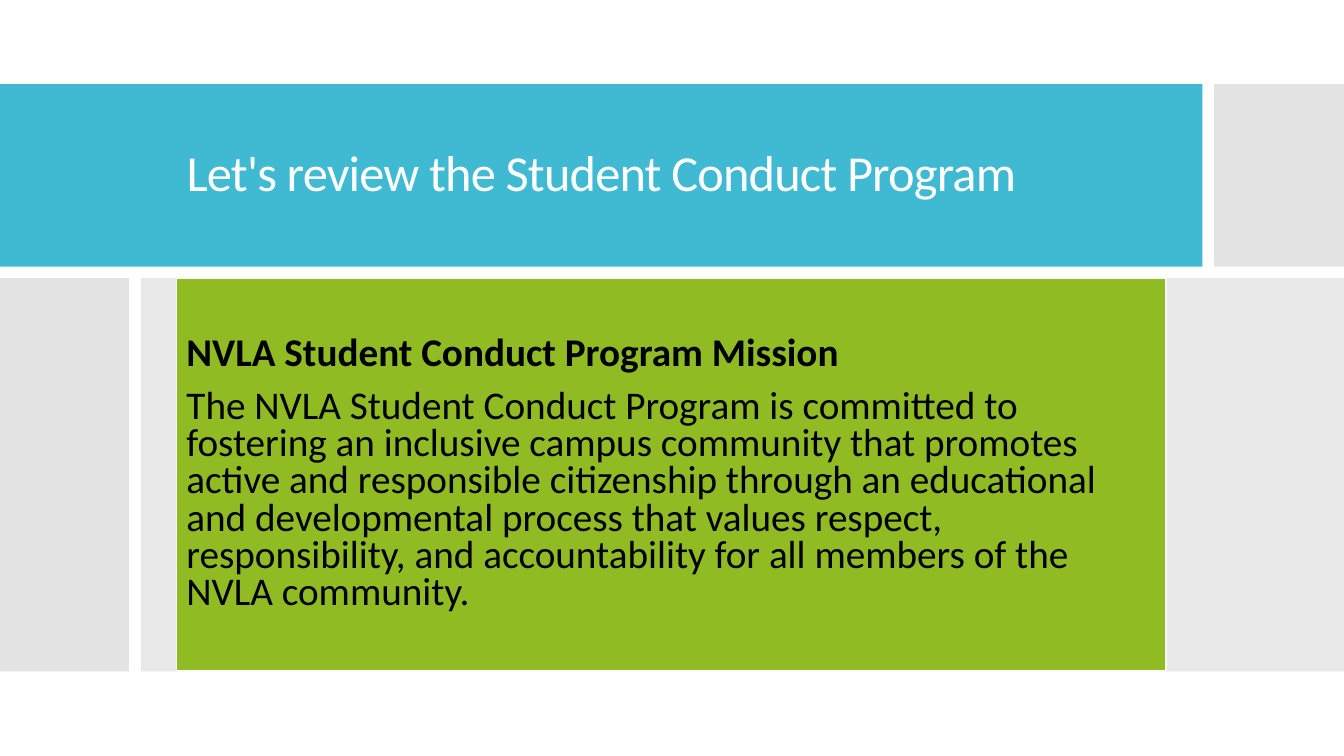
"""Build the slide that presents the mission of the Student Conduct Program."""
from dataclasses import dataclass

import pptx
import pptx.dml.color
import pptx.enum.shapes
import pptx.enum.text
import pptx.oxml.ns
import pptx.util
from lxml import etree
from pptx.util import Cm


@dataclass(frozen=True)
class Theme:
    font: str = "Calibri"
    teal: str = "40BAD2"
    green: str = "90BB23"
    grey: str = "C8C8C8"
    pale_grey: str = "D9D9D9"
    outline: str = "F9F9F9"
    white: str = "FFFFFF"
    black: str = "000000"
    title_size: float = 36
    mission_size: float = 28


THEME = Theme()
SLIDE_WIDTH, SLIDE_HEIGHT = Cm(33.87), Cm(19.05)
BAND_TOP, BAND_HEIGHT = Cm(2.12), Cm(4.6)
PANEL_TOP, PANEL_HEIGHT = Cm(7.01), Cm(9.91)
TEXT_LEFT, TEXT_WIDTH = Cm(4.45), Cm(24.94)


def paint(fill, color, opacity=100):
    fill.solid()
    fill.fore_color.rgb = pptx.dml.color.RGBColor.from_string(color)
    return opacity


def set_opacity(block, percent):
    for color in block.element.iter(pptx.oxml.ns.qn("a:srgbClr")):
        alpha = etree.SubElement(color, pptx.oxml.ns.qn("a:alpha"))
        alpha.set("val", str(percent * 1000))


def add_block(slide, left, top, width, height, color):
    block = slide.shapes.add_shape(
        pptx.enum.shapes.MSO_SHAPE.RECTANGLE, left, top, width, height)
    block.shadow.inherit = False
    paint(block.fill, color)
    block.line.fill.background()
    return block


def prepare_frame(frame):
    frame.word_wrap = True
    frame.auto_size = pptx.enum.text.MSO_AUTO_SIZE.NONE
    frame.vertical_anchor = pptx.enum.text.MSO_ANCHOR.MIDDLE


def style_paragraph(paragraph, size, color, spacing, bold=False):
    paragraph.alignment = pptx.enum.text.PP_ALIGN.LEFT
    paragraph.line_spacing = spacing
    paragraph.font.name = THEME.font
    paragraph.font.size = pptx.util.Pt(size)
    paragraph.font.bold = bold
    paragraph.font.color.rgb = pptx.dml.color.RGBColor.from_string(color)


def place_title(slide, text):
    title = slide.shapes.title
    title.left, title.top = TEXT_LEFT, Cm(3.02)
    title.width, title.height = TEXT_WIDTH, Cm(2.77)
    title.text_frame.text = text
    prepare_frame(title.text_frame)
    style_paragraph(title.text_frame.paragraphs[0], THEME.title_size, THEME.white, 0.9)
    for properties in title.element.iter(pptx.oxml.ns.qn("a:defRPr")):
        properties.set("spc", "-60")
    title.element.getparent().append(title.element)


def add_mission(slide, heading, statement):
    panel = add_block(slide, TEXT_LEFT, PANEL_TOP, TEXT_WIDTH, PANEL_HEIGHT, THEME.green)
    paint(panel.line.fill, THEME.outline)
    panel.line.width = pptx.util.Pt(1.35)
    frame = panel.text_frame
    prepare_frame(frame)
    frame.text = f"{heading}\n{statement}"
    for paragraph, bold in zip(frame.paragraphs, (True, False)):
        style_paragraph(paragraph, THEME.mission_size, THEME.black, 0.79, bold)
    frame.paragraphs[1].space_before = pptx.util.Pt(11.4)


def main():
    deck = pptx.Presentation()
    deck.slide_width, deck.slide_height = SLIDE_WIDTH, SLIDE_HEIGHT
    slide = deck.slides.add_slide(deck.slide_layouts.get_by_name("Title Only"))

    add_block(slide, 0, BAND_TOP, Cm(30.3), BAND_HEIGHT, THEME.teal)
    side_blocks = (
        (Cm(30.6), BAND_TOP, Cm(3.27), BAND_HEIGHT, THEME.grey, 50),
        (0, PANEL_TOP, Cm(3.25), PANEL_HEIGHT, THEME.grey, 50),
        (Cm(3.55), PANEL_TOP, Cm(30.32), PANEL_HEIGHT, THEME.pale_grey, 60),
    )
    for *bounds, color, opacity in side_blocks:
        set_opacity(add_block(slide, *bounds, color), opacity)

    place_title(slide, "Let's review the Student Conduct Program")
    add_mission(
        slide,
        "NVLA Student Conduct Program Mission",
        "The NVLA Student Conduct Program is committed to fostering an inclusive "
        "campus community that promotes active and responsible citizenship through "
        "an educational and developmental process that values respect, "
        "responsibility, and accountability for all members of the NVLA community.",
    )
    deck.save("out.pptx")


if __name__ == "__main__":
    main()
